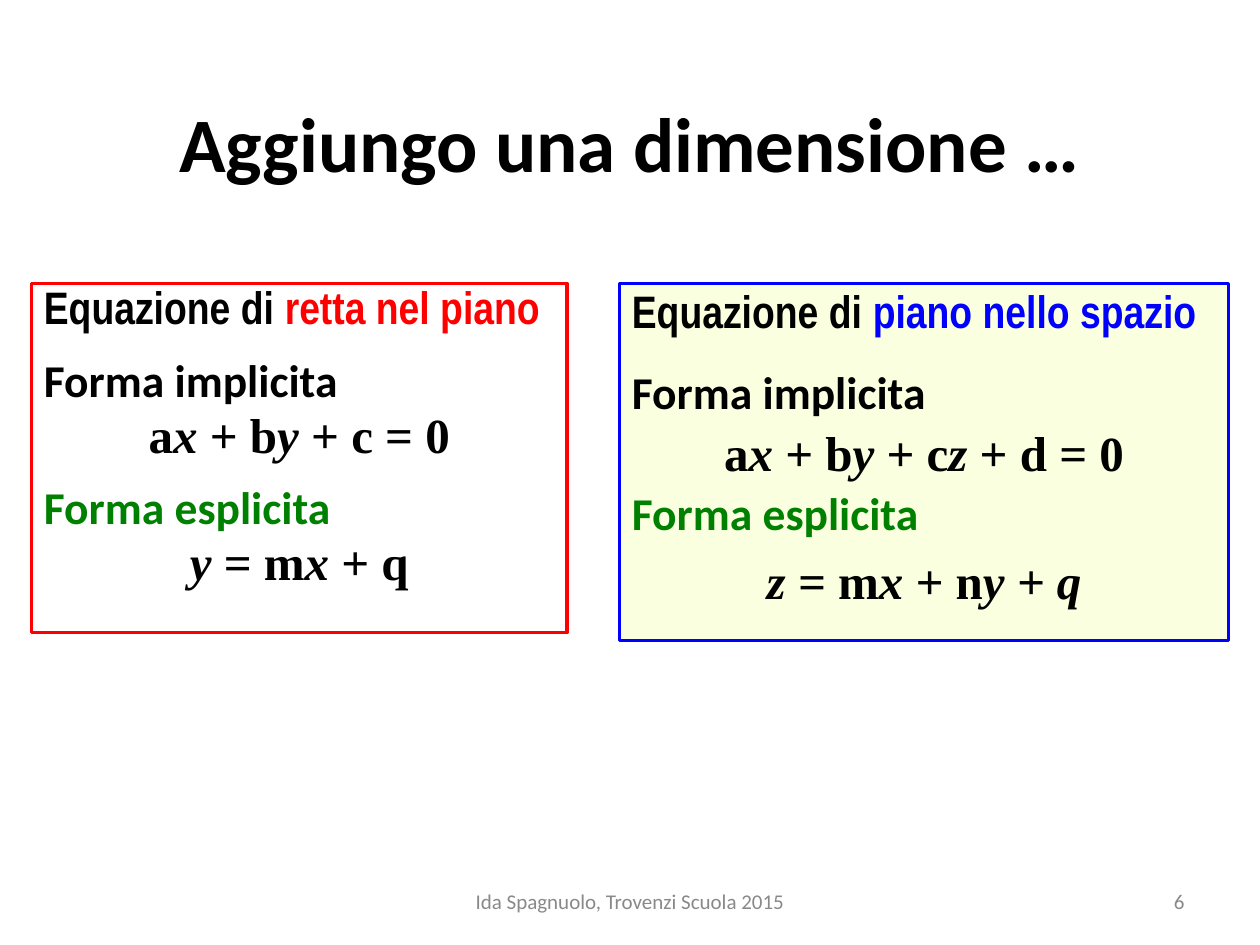
import pptx
import pptx.util
import pptx.dml.color
import pptx.enum.shapes
import pptx.enum.text

Inches, Pt = pptx.util.Inches, pptx.util.Pt
RGBColor = pptx.dml.color.RGBColor
ALIGN = pptx.enum.text.PP_ALIGN
ANCHOR = pptx.enum.text.MSO_ANCHOR

BLACK = RGBColor(0, 0, 0)
WHITE = RGBColor(255, 255, 255)
RED = RGBColor(255, 0, 0)
BLUE = RGBColor(0, 0, 255)
GREEN = RGBColor(0, 128, 0)
CREAM = RGBColor(0xFA, 0xFF, 0xE0)
GREY = RGBColor(0x89, 0x89, 0x89)

# The slide is a grid of 120 columns and 90 rows
WIDTH, HEIGHT = 10, 7.5
CELL = WIDTH / 120

# Font formats by role
TITLE = {"name": "Calibri", "size": Pt(44), "bold": True}
HEADING = {"name": "Arial Narrow", "size": Pt(26), "bold": True}
FORM = {"name": "Calibri", "size": Pt(26), "bold": True}
ROMAN = {"name": "Times New Roman", "size": Pt(28), "bold": True, "italic": False}
ITALIC = {**ROMAN, "italic": True}
FOOTER = {"name": "Calibri", "size": Pt(12)}


def equation(*parts):
    """Alternate upright and italic spans, starting upright."""
    return [(text, (ROMAN, ITALIC)[i % 2], BLACK) for i, text in enumerate(parts) if text]


def line(spans, before, spacing=1.0, align=ALIGN.LEFT):
    return spans, {"space_before": Pt(before), "line_spacing": spacing, "alignment": align}


# Plain texts: column, row, columns wide, rows high, then the line
LABELS = [
    ((6, 6, 108, 15),
     line([("Aggiungo una dimensione …", TITLE, BLACK)], 0, align=ALIGN.CENTER)),
    ((41, 83.4, 38, 4.8),
     line([("Ida Spagnuolo, Trovenzi Scuola 2015", FOOTER, GREY)], 0, align=ALIGN.CENTER)),
    ((86, 83.4, 28, 4.8),
     line([("6", FOOTER, GREY)], 0, align=ALIGN.RIGHT)),
]

# Panels: the gaps go before the implicit form, the explicit form and its equation
PANELS = [
    {"place": (3, 27, 51, 33.25), "fill": WHITE, "accent": RED,
     "topic": "retta nel piano", "spacing": 0.8, "gaps": (16.5, 15.5, 5.6), "last_spacing": 0.8,
     "implicit": equation("a", "x", " + b", "y", " + c = 0"),
     "explicit": equation("", "y", " = m", "x", " + q")},
    {"place": (59, 27, 58, 34), "fill": CREAM, "accent": BLUE,
     "topic": "piano nello spazio", "spacing": 0.9, "gaps": (18, 5.2, 6), "last_spacing": 1.0,
     "implicit": equation("a", "x", " + b", "y", " + c", "z", " + d = 0"),
     "explicit": equation("", "z = ", "m", "x + ", "n", "y + q")},
]


def locate(cells):
    return [Inches(count * CELL) for count in cells]


def write(frame, lines, anchor):
    frame.word_wrap = True
    frame.vertical_anchor = anchor
    for i, (spans, layout) in enumerate(lines):
        para = frame.add_paragraph() if i else frame.paragraphs[0]
        for key, value in layout.items():
            setattr(para, key, value)
        for text, style, color in spans:
            span = para.add_run()
            span.text = text
            for key, value in style.items():
                setattr(span.font, key, value)
            span.font.color.rgb = color


def panel_lines(panel):
    spacing = panel["spacing"]
    implicit_gap, explicit_gap, last_gap = panel["gaps"]
    return [
        line([("Equazione di ", HEADING, BLACK),
              (panel["topic"], HEADING, panel["accent"])], 5.2, spacing),
        line([("Forma implicita", FORM, BLACK)], implicit_gap, spacing),
        line(panel["implicit"], 5.6, spacing, ALIGN.CENTER),
        line([("Forma esplicita", FORM, GREEN)], explicit_gap, spacing),
        line(panel["explicit"], last_gap, panel["last_spacing"], ALIGN.CENTER),
    ]


def main():
    deck = pptx.Presentation()
    deck.slide_width, deck.slide_height = Inches(WIDTH), Inches(HEIGHT)
    page = deck.slides.add_slide(deck.slide_layouts[6])

    # Title, footer and page number
    for place, content in LABELS:
        box = page.shapes.add_textbox(*locate(place))
        write(box.text_frame, [content], ANCHOR.MIDDLE)

    # Line and plane equations side by side
    for panel in PANELS:
        box = page.shapes.add_shape(
            pptx.enum.shapes.MSO_SHAPE.RECTANGLE, *locate(panel["place"]))
        box.shadow.inherit = False
        box.fill.solid()
        box.fill.fore_color.rgb = panel["fill"]
        box.line.color.rgb = panel["accent"]
        box.line.width = Pt(2)
        write(box.text_frame, panel_lines(panel), ANCHOR.TOP)

    deck.save("out.pptx")


if __name__ == "__main__":
    main()
